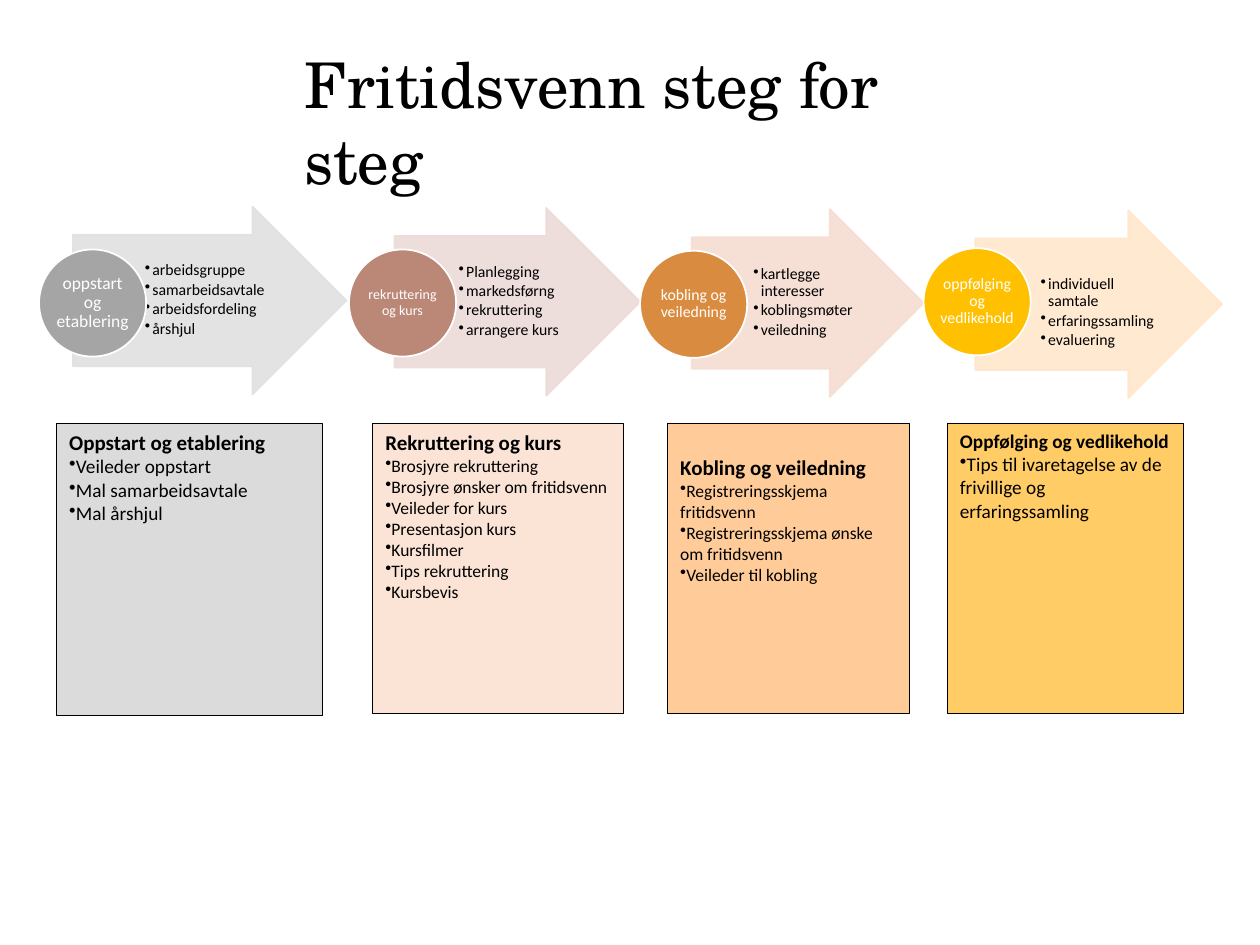
from dataclasses import dataclass

from lxml import etree
from pptx import Presentation
from pptx import util as u
from pptx.dml.color import RGBColor
from pptx.enum import shapes, text
from pptx.oxml.ns import qn

BLACK = RGBColor(0x00, 0x00, 0x00)
WHITE = RGBColor(0xFF, 0xFF, 0xFF)
GREY = RGBColor(0xA5, 0xA5, 0xA5)
ROSE = RGBColor(0xBB, 0x87, 0x76)
ORANGE = RGBColor(0xD9, 0x8B, 0x3F)
GOLD = RGBColor(0xFF, 0xC0, 0x00)
PALE_GREY = RGBColor(0xE1, 0xE1, 0xE1)
PALE_ROSE = RGBColor(0xEC, 0xDB, 0xD9)
PALE_ORANGE = RGBColor(0xF6, 0xDD, 0xD1)
PALE_GOLD = RGBColor(0xFF, 0xE7, 0xCB)
CARD_GREY = RGBColor(0xDB, 0xDB, 0xDB)
CARD_ROSE = RGBColor(0xFB, 0xE4, 0xD5)
CARD_ORANGE = RGBColor(0xFF, 0xCC, 0x99)
CARD_GOLD = RGBColor(0xFF, 0xCC, 0x66)


@dataclass
class Step:
    label: str
    label_size: int
    circle: tuple
    circle_color: RGBColor
    arrow: tuple
    arrow_color: RGBColor
    tasks: tuple
    tasks_span: tuple
    tasks_drop: float


@dataclass
class Card:
    heading: str
    items: tuple
    sizes: tuple
    place: tuple
    color: RGBColor
    drop: float


STEPS = [
    Step("oppstart og etablering", 10, (0.31, 1.98), GREY, (0.58, 2.17), PALE_GREY,
         ("arbeidsgruppe", "samarbeidsavtale", "arbeidsfordeling", "årshjul"),
         (1.12, 1.11), 0),
    Step("rekruttering og kurs", 8, (2.77, 1.98), ROSE, (3.13, 1.95), PALE_ROSE,
         ("Planlegging", "markedsførng", "rekruttering", "arrangere kurs"),
         (3.61, 0.95), 0),
    Step("kobling og veiledning", 9, (5.08, 1.99), ORANGE, (5.49, 1.84), PALE_ORANGE,
         ("kartlegge interesser", "koblingsmøter", "veiledning"),
         (5.95, 0.9), 0),
    Step("oppfølging og vedlikehold", 9, (7.33, 1.97), GOLD, (7.74, 1.96), PALE_GOLD,
         ("individuell samtale", "erfaringssamling", "evaluering"),
         (8.23, 0.96), 0.14),
]

CARDS = [
    Card("Oppstart og etablering",
         ("Veileder oppstart", "Mal samarbeidsavtale", "Mal årshjul"),
         (12, 11), (0.45, 2.11, 2.32), CARD_GREY, 0),
    Card("Rekruttering og kurs",
         ("Brosjyre rekruttering", "Brosjyre ønsker om fritidsvenn", "Veileder for kurs",
          "Presentasjon kurs", "Kursfilmer", "Tips rekruttering", "Kursbevis"),
         (12, 10), (2.96, 1.99, 2.3), CARD_ROSE, 0),
    Card("Kobling og veiledning",
         ("Registreringsskjema fritidsvenn", "Registreringsskjema ønske om fritidsvenn",
          "Veileder til kobling"),
         (12, 10), (5.3, 1.92, 2.3), CARD_ORANGE, 0.2),
    Card("Oppfølging og vedlikehold",
         ("Tips til ivaretagelse av de frivillige og erfaringssamling",),
         (11, 11), (7.52, 1.87, 2.3), CARD_GOLD, 0),
]


class StepSlide:
    body_font = "Calibri"
    title_font = "TeX Gyre Schola"

    def __init__(self, deck):
        self.page = deck.slides.add_slide(deck.slide_layouts[6])

    def shape(self, kind, place, fill, line, width):
        shape = self.page.shapes.add_shape(kind, *map(u.Inches, place))
        shape.shadow.inherit = False
        shape.fill.solid()
        shape.fill.fore_color.rgb = fill
        shape.line.color.rgb = line
        shape.line.width = u.Pt(width)
        return shape

    def fill_text(self, box, lines, size, anchor, insets, font=body_font, color=BLACK):
        frame = box.text_frame
        frame.word_wrap = True
        frame.vertical_anchor = anchor
        (frame.margin_left, frame.margin_top,
         frame.margin_right, frame.margin_bottom) = map(u.Inches, insets)
        frame.text = "\n".join(lines)
        for para in frame.paragraphs:
            para.alignment = text.PP_ALIGN.LEFT
            for span in para.runs:
                span.font.name = font
                span.font.size = u.Pt(size)
                span.font.color.rgb = color
        return frame.paragraphs

    def bullet(self, para, indent=0):
        properties = para._p.get_or_add_pPr()
        properties.set("marL", str(u.Inches(indent)))
        properties.set("indent", str(-u.Inches(indent)))
        etree.SubElement(properties, qn("a:buChar")).set("char", "•")

    def title(self, wording):
        box = self.page.shapes.add_textbox(
            u.Inches(2.32), u.Inches(0), u.Inches(5.57), u.Inches(1.62))
        self.fill_text(box, [wording], 36, text.MSO_ANCHOR.MIDDLE,
                       (0.1, 0.35, 0.1, 0.05), self.title_font)

    def arrow(self, step, top):
        left, width = step.arrow
        arrow = self.shape(shapes.MSO_SHAPE.RIGHT_ARROW, (left, top, width, 1.49),
                           step.arrow_color, step.arrow_color, 1)
        arrow.adjustments[0] = 0.7
        arrow.adjustments[1] = 0.5
        for color in arrow._element.spPr.iter(qn("a:srgbClr")):
            etree.SubElement(color, qn("a:alpha")).set("val", "90000")

    def tasks(self, step, top):
        left, width = step.tasks_span
        box = self.page.shapes.add_textbox(
            *map(u.Inches, (left, top, width, 1.04)))
        for para in self.fill_text(box, step.tasks, 9, text.MSO_ANCHOR.MIDDLE,
                                   (0.03, 0.01 + step.tasks_drop, 0.01, 0.01)):
            para.line_spacing = 0.9
            para.space_after = u.Pt(1.35)
            self.bullet(para, 0.06)

    def circle(self, step):
        circle = self.shape(shapes.MSO_SHAPE.OVAL, (*step.circle, 0.85, 0.85),
                            step.circle_color, WHITE, 1)
        for para in self.fill_text(circle, [step.label], step.label_size,
                                   text.MSO_ANCHOR.MIDDLE, (0.01,) * 4, color=WHITE):
            para.alignment = text.PP_ALIGN.CENTER
            para.line_spacing = 0.9

    def card(self, card):
        left, width, height = card.place
        box = self.shape(shapes.MSO_SHAPE.RECTANGLE, (left, 3.36, width, height),
                         card.color, BLACK, 0.5)
        heading_size, item_size = card.sizes
        heading, *items = self.fill_text(
            box, (card.heading, *card.items), item_size,
            text.MSO_ANCHOR.TOP, (0.1, 0.05 + card.drop, 0.1, 0.05))
        heading.runs[0].font.size = u.Pt(heading_size)
        heading.runs[0].font.bold = True
        for para in items:
            self.bullet(para)


def main():
    deck = Presentation()
    deck.slide_width = u.Inches(10)
    deck.slide_height = u.Inches(7.5)
    slide = StepSlide(deck)
    for index, step in enumerate(STEPS):
        top = 1.64 + 0.01 * index
        slide.arrow(step, top)
        slide.tasks(step, top + 0.22)
        slide.circle(step)
    for card in CARDS:
        slide.card(card)
    slide.title("Fritidsvenn steg for steg")
    deck.save("out.pptx")


if __name__ == "__main__":
    main()
